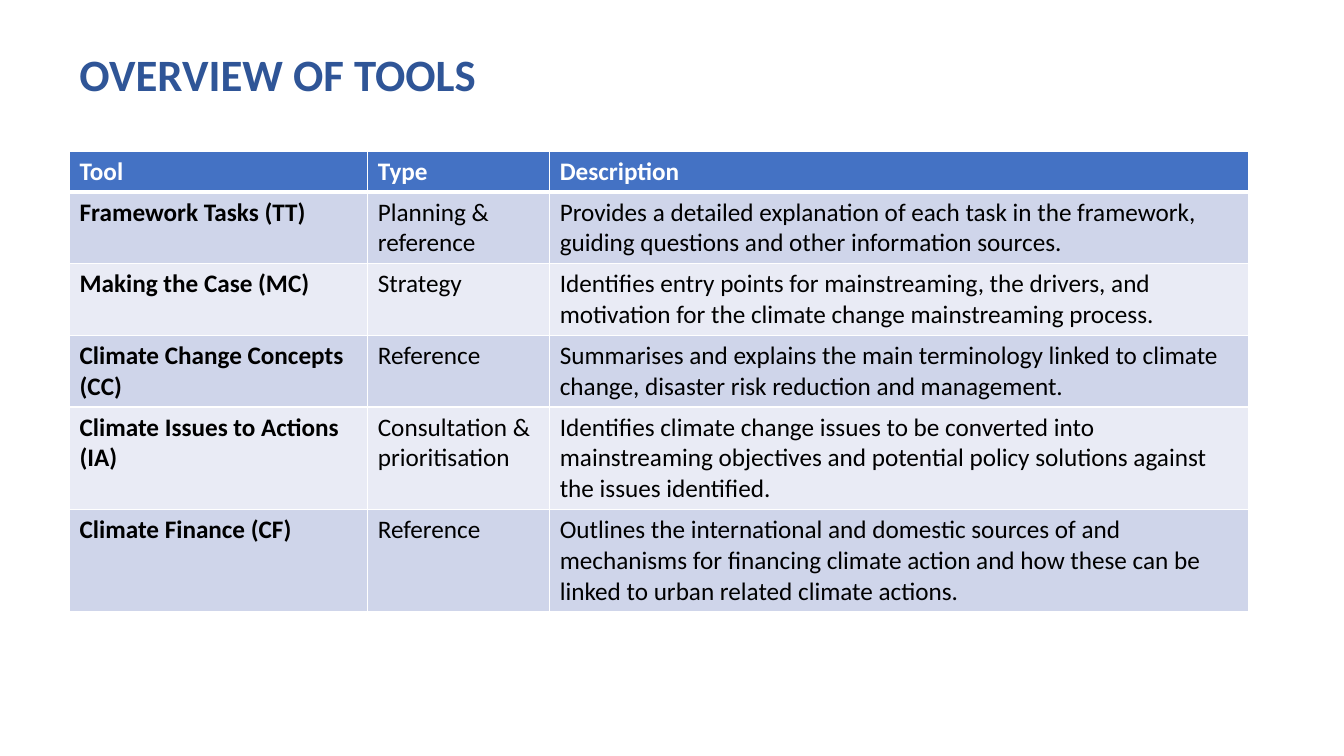
"""Build the slide that lists the climate mainstreaming tools in a table."""
from lxml import etree
from pptx import Presentation
from pptx import util as u
from pptx.dml import color
from pptx.oxml import ns


def rgb(hex_value):
    return color.RGBColor.from_string(hex_value)


def add_border(cell, side, width):
    properties = cell._tc.get_or_add_tcPr()
    line = etree.SubElement(properties, ns.qn(f"a:ln{side}"), w=str(u.Pt(width)))
    fill = etree.SubElement(line, ns.qn("a:solidFill"))
    etree.SubElement(fill, ns.qn("a:srgbClr"), val="FFFFFF")


HEADER_FILL = "4472C4"
BAND_FILLS = ["E9EBF5", "CFD5EA"]
COLUMN_WIDTHS = [213, 130, 499.5]
LINE_HEIGHT = 22
CELL_PADDING = 7.2
LEFT = 49.7

ROWS = [
    (1, "Tool", "Type", "Description"),
    (2, "Framework Tasks (TT)", "Planning & reference",
     "Provides a detailed explanation of each task in the framework, "
     "guiding questions and other information sources."),
    (2, "Making the Case (MC)", "Strategy",
     "Identifies entry points for mainstreaming, the drivers, and "
     "motivation for the climate change mainstreaming process."),
    (2, "Climate Change Concepts (CC)", "Reference",
     "Summarises and explains the main terminology linked to climate "
     "change, disaster risk reduction and management."),
    (3, "Climate Issues to Actions (IA)", "Consultation & prioritisation",
     "Identifies climate change issues to be converted into mainstreaming "
     "objectives and potential policy solutions against the issues identified."),
    (3, "Climate Finance (CF)", "Reference",
     "Outlines the international and domestic sources of and mechanisms for "
     "financing climate action and how these can be linked to urban related "
     "climate actions."),
]

presentation = Presentation()
presentation.slide_width = u.Pt(960)
presentation.slide_height = u.Pt(540)
slide = presentation.slides.add_slide(presentation.slide_layouts[6])

row_heights = [CELL_PADDING + LINE_HEIGHT * row[0] for row in ROWS]
table = slide.shapes.add_table(
    len(ROWS), len(COLUMN_WIDTHS), u.Pt(LEFT), u.Pt(108),
    u.Pt(sum(COLUMN_WIDTHS)), u.Pt(sum(row_heights))).table
for column, width in zip(table.columns, COLUMN_WIDTHS):
    column.width = u.Pt(width)

for row_index, (line_count, *labels) in enumerate(ROWS):
    table.rows[row_index].height = u.Pt(row_heights[row_index])
    is_header = row_index == 0
    for column_index, label in enumerate(labels):
        cell = table.cell(row_index, column_index)
        add_border(cell, "L", 1)
        add_border(cell, "R", 1)
        add_border(cell, "T", 3 if row_index == 1 else 1)
        add_border(cell, "B", 3 if is_header else 1)
        cell.fill.solid()
        cell.fill.fore_color.rgb = rgb(HEADER_FILL if is_header else BAND_FILLS[row_index % 2])
        cell.text_frame.text = label
        font = cell.text_frame.paragraphs[0].runs[0].font
        font.name = "Calibri"
        font.size = u.Pt(18)
        font.bold = is_header or column_index == 0
        font.color.rgb = rgb("FFFFFF" if is_header else "000000")

title = slide.shapes.add_textbox(u.Pt(LEFT), u.Pt(29.5), u.Pt(471.6), u.Pt(46))
title.text_frame.word_wrap = True
title.text_frame.text = "OVERVIEW OF TOOLS"
title_font = title.text_frame.paragraphs[0].runs[0].font
title_font.name = "Calibri"
title_font.size = u.Pt(32)
title_font.bold = True
title_font.color.rgb = rgb("2F5597")

presentation.save("out.pptx")
